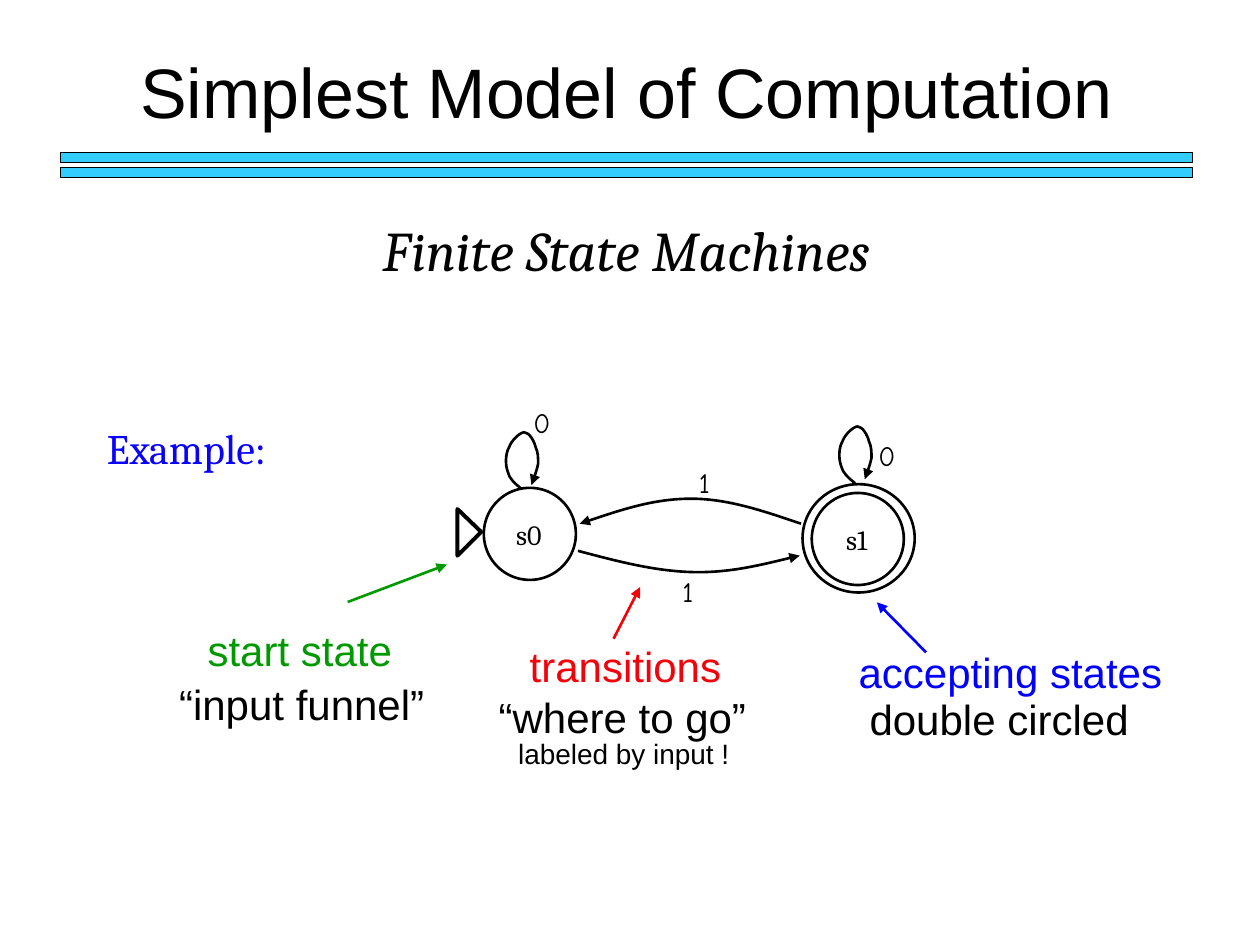
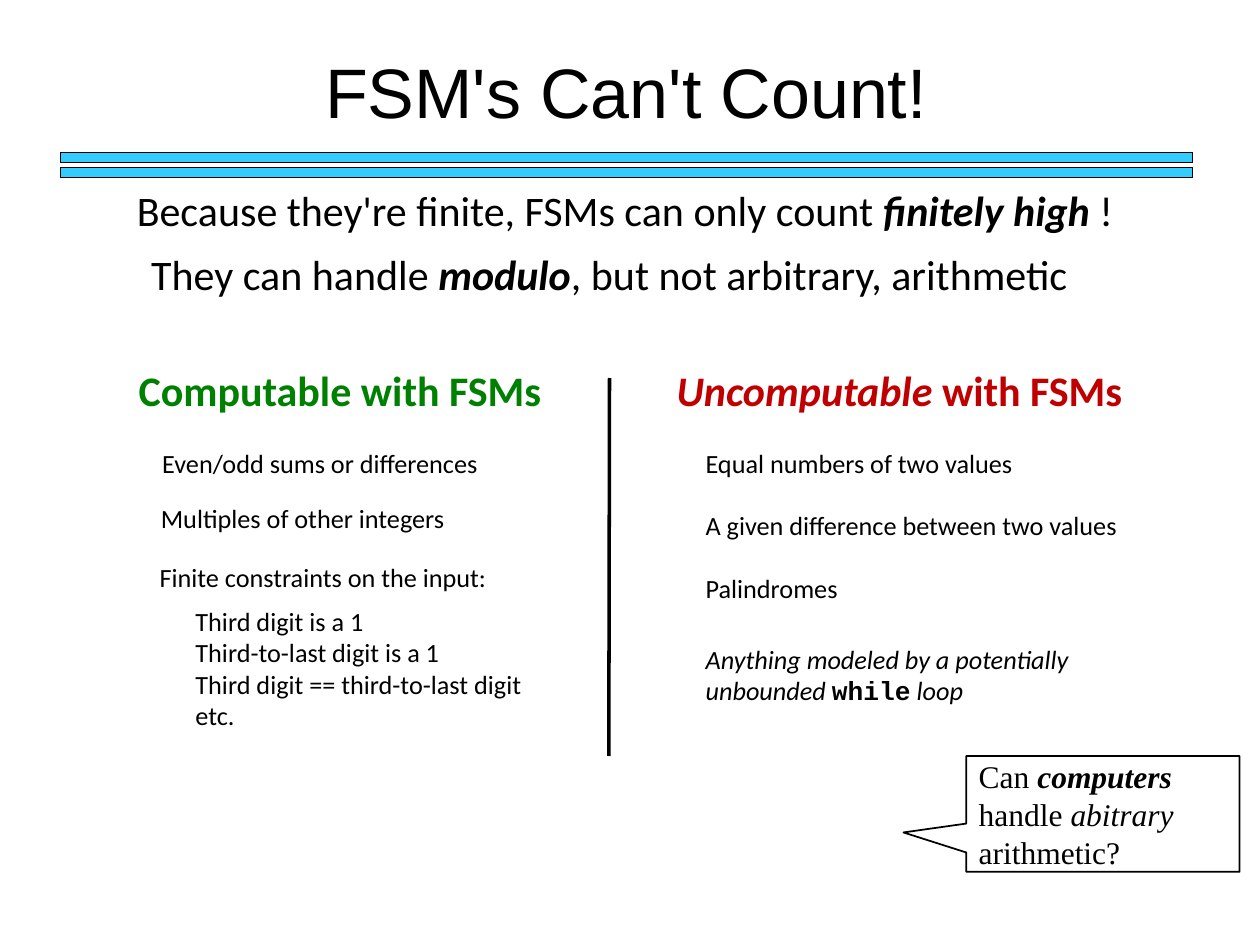
import pptx
import pptx.dml.color
import pptx.enum.shapes
import pptx.enum.text
import pptx.oxml.ns
import pptx.util

Pt = pptx.util.Pt
RGB = pptx.dml.color.RGBColor
SHAPE = pptx.enum.shapes.MSO_SHAPE
ALIGN = pptx.enum.text.PP_ALIGN
ANCHOR = pptx.enum.text.MSO_ANCHOR
qn = pptx.oxml.ns.qn

BLACK = RGB(0, 0, 0)
BAND = RGB(0x33, 0xCC, 0xFF)
START_GREEN = RGB(0, 0x99, 0)
ACCEPT_BLUE = RGB(0, 0, 0xFF)
EXAMPLE_BLUE = RGB(0x09, 0, 0xFF)
MOVE_RED = RGB(0xF3, 0x02, 0x0A)
CAN_GREEN = RGB(0, 0x80, 0)
CANNOT_RED = RGB(0xC0, 0, 0)

TITLE_BOX = (37.8, 24.2, 640, 55.4)
TITLE_FORMAT = {"name": "Arial", "size": Pt(40)}
BAND_TOPS = (87.1, 95.6)

SUBTITLE = {"name": "Cambria", "size": Pt(32), "italic": True}
EXAMPLE = {"name": "Cambria", "size": Pt(24)}
STATE = {"name": "Cambria", "size": Pt(16)}
INPUT = {"name": "Comic Neue", "size": Pt(16)}
LABEL = {"name": "Arial", "size": Pt(24)}
SMALL_LABEL = {"name": "Arial", "size": Pt(16)}
INTRO = {"name": "Calibri", "size": Pt(24)}
HEADING = {"name": "Calibri", "size": Pt(24), "bold": True}
ITEM = {"name": "Calibri", "size": Pt(15), "bold": False}
QUESTION = {"name": "Times New Roman", "size": Pt(18)}
STRONG = {"bold": True, "italic": True}
SLANTED = {"italic": True}
CODE = {"name": "Courier New", "bold": True}

MACHINE_LABELS = [
    ((153.4, 119.5, 409, 46), "Finite State Machines", SUBTITLE, BLACK),
    ((287.8, 292.3, 28.8, 26.6), "s0", STATE, BLACK),
    ((475.2, 294.8, 28.8, 26.6), "s1", STATE, BLACK),
    ((111.6, 353.2, 119.5, 36), "start state", LABEL, START_GREEN),
    ((95, 384.1, 154.8, 36), "“input funnel”", LABEL, BLACK),
    ((295.5, 362.2, 123.8, 36), "transitions", LABEL, MOVE_RED),
    ((277.9, 391.7, 155.5, 36), "“where to go”", LABEL, BLACK),
    ((288.7, 417.2, 135.4, 26.6), "labeled by input !", SMALL_LABEL, BLACK),
    ((483.4, 365.8, 187.9, 36), "accepting states", LABEL, ACCEPT_BLUE),
    ((489.6, 392.8, 162.7, 36), "double circled", LABEL, BLACK),
    ((391.7, 262.4, 21.6, 26.6), "1", INPUT, BLACK),
    ((382.3, 324.7, 21.6, 26.6), "1", INPUT, BLACK),
    ((297.4, 227.9, 24.5, 26.6), "0", INPUT, BLACK),
    ((494.6, 247, 24.5, 26.6), "0", INPUT, BLACK),
]
STATE_CIRCLES = [
    (276.5, 278.8, 52.6, 52.6),
    (463.9, 281.7, 52.6, 52.6),
    (458.6, 276.7, 64.1, 61.9),
]
POINTERS = [
    ((198.7, 344), (255.4, 322.6), START_GREEN),
    ((529.2, 372.8), (501.1, 344.2), ACCEPT_BLUE),
    ((350.6, 365), (365.8, 335.5), MOVE_RED),
]
FUNNEL = [(261.4, 290.9), (261.4, 317.6), (275, 304)]
TO_S1 = [(330.3, 314.8), (351.4, 320.4), (373, 326.2), (394.6, 326.9),
         (415.4, 327.6), (436.3, 322.6), (457, 317.5)]
TO_S0 = [(457.7, 299.3), (437, 292.3), (416.2, 285), (395, 285),
         (373.7, 285), (352.1, 292.3), (331.2, 299.3)]
LOOP = [(0, 0), (-3.6, -2.9), (-7.2, -5.8), (-8, -10), (-9.4, -13.7),
        (-9.4, -20.2), (-7.2, -23.8), (-5.8, -28), (-0.7, -32.4),
        (1.4, -32.4), (4.3, -32.4), (7.2, -27.4), (8, -23.8), (9.4, -20.9),
        (9.4, -18), (9.4, -14.4), (8.6, -10.8), (7.2, -6.5), (5.6, -2.2)]
LOOP_STARTS = [(298.1, 279.4), (488.6, 276.1)]

INTRO_LINES = [
    ((66.2, 101.9, 581.8, 36.7),
     [("Because they're finite, FSMs can only count ", {}),
      ("finitely high", STRONG), (" !", {})]),
    ((60, 138.2, 581.8, 36.7),
     [("They can handle ", {}), ("modulo", STRONG),
      (", but not arbitrary, arithmetic ", {})]),
]
COLUMNS = [
    {"heading": [("Computable with FSMs", {})],
     "heading_box": (72, 204.9, 247, 36.7), "color": CAN_GREEN,
     "list_box": (84, 252, 240, 180),
     "items": [
         ([("Even/odd sums or differences", {})], 0, 1.5),
         ([("Multiples of other integers", {})], 13.4, 0.7),
         ([("Finite constraints on the input:", {})], 16, 0),
         ([("Third digit is a 1", {})], 6.8, 20.5),
         ([("Third-to-last digit is a 1", {})], 0, 20.5),
         ([("Third digit == third-to-last digit", {})], 0, 20.5),
         ([("etc.", {})], 0, 20.5)]},
    {"heading": [("Uncomputable ", SLANTED), ("with FSMs", {})],
     "heading_box": (379.4, 204.9, 280, 36.7), "color": CANNOT_RED,
     "list_box": (396, 252, 252, 180),
     "items": [
         ([("Equal numbers of two values", {})], 0, 0),
         ([("A given difference between two values", {})], 17.7, 0),
         ([("Palindromes", {})], 17.7, 0),
         ([("Anything modeled by a potentially unbounded ", SLANTED),
           ("while", CODE), (" loop", SLANTED)], 22.5, 0)]},
]
CALLOUT_BOX = (552.2, 432, 156.2, 66.2)
CALLOUT = [("Can ", {}), ("computers", STRONG), (" handle ", {}),
           ("abitrary ", SLANTED), ("arithmetic?", {})]


def points(values):
    return [Pt(value) for value in values]


def set_all(target, values):
    for name, value in values.items():
        setattr(target, name, value)


def append_element(parent, tag, **attributes):
    child = parent.makeelement(qn(tag), attributes)
    parent.append(child)
    return child


def write(paragraph, runs, base, color, align=ALIGN.LEFT, before=0):
    set_all(paragraph, {"alignment": align, "space_before": Pt(before), "line_spacing": 1.0})
    for text, extra in runs:
        run = paragraph.add_run()
        run.text = text
        set_all(run.font, {**base, **extra})
        run.font.color.rgb = color


def indent_plain(paragraph, indent):
    properties = paragraph._p.get_or_add_pPr()
    properties.set("marL", str(Pt(indent)))
    properties.set("indent", "0")
    append_element(properties, "a:buNone")


def frame(shape, anchor, wrap=True):
    set_all(shape.text_frame, {"word_wrap": wrap, "vertical_anchor": anchor,
                               "auto_size": pptx.enum.text.MSO_AUTO_SIZE.NONE})
    return shape.text_frame


def place(placeholder, box):
    set_all(placeholder, dict(zip(("left", "top", "width", "height"), points(box))))
    return frame(placeholder, ANCHOR.TOP)


def outline(shape, width, fill=None):
    shape.shadow.inherit = False
    if fill is None:
        shape.fill.background()
    else:
        shape.fill.solid()
        shape.fill.fore_color.rgb = fill
    shape.line.color.rgb = BLACK
    shape.line.width = Pt(width)
    return shape


def add_arrowhead(shape):
    append_element(shape.line._get_or_add_ln(), "a:tailEnd", type="triangle")


def add_line(slide, start, end, color, width):
    line = slide.shapes.add_connector(
        pptx.enum.shapes.MSO_CONNECTOR.STRAIGHT, *points(start + end))
    line.line.color.rgb = color
    line.line.width = Pt(width)
    append_element(line._element.spPr, "a:effectLst")
    return line


def add_outline(slide, corners, width, closed=False):
    builder = slide.shapes.build_freeform(*points(corners[0]))
    builder.add_line_segments([points(corner) for corner in corners[1:]], close=closed)
    return outline(builder.convert_to_shape(), width)


def add_curve(slide, controls, width):
    curve = add_outline(slide, controls, width)
    segments = list(curve._element.iter(qn("a:lnTo")))
    track = segments[0].getparent()
    for first in range(0, len(segments), 3):
        bend = append_element(track, "a:cubicBezTo")
        for segment in segments[first:first + 3]:
            bend.append(segment[0])
            track.remove(segment)
    return curve


def start_slide(deck, layout, title):
    slide = deck.slides.add_slide(deck.slide_layouts[layout])
    for top in BAND_TOPS:
        band = slide.shapes.add_shape(SHAPE.RECTANGLE, *points((34.6, top, 646.9, 5.9)))
        outline(band, 0.75, BAND)
    heading = place(slide.shapes.title, TITLE_BOX)
    write(heading.paragraphs[0], [(title, {})], TITLE_FORMAT, BLACK, ALIGN.CENTER)
    return slide


def add_label(slide, box, runs, base, color, align=ALIGN.CENTER, anchor=ANCHOR.MIDDLE, wrap=False):
    label = slide.shapes.add_textbox(*points(box))
    write(frame(label, anchor, wrap).paragraphs[0], runs, base, color, align)


def build_machine(deck):
    slide = start_slide(deck, 5, "Simplest Model of Computation")
    for circle in STATE_CIRCLES:
        outline(slide.shapes.add_shape(SHAPE.OVAL, *points(circle)), 1.5)
    add_outline(slide, FUNNEL, 2.25, closed=True)
    loops = [[(x + left, y + top) for x, y in LOOP] for left, top in LOOP_STARTS]
    for transition in [TO_S1, TO_S0, *loops]:
        add_arrowhead(add_curve(slide, transition, 1.5))
    for start, end, color in POINTERS:
        add_arrowhead(add_line(slide, start, end, color, 1.5))
    for box, text, base, color in MACHINE_LABELS:
        add_label(slide, box, [(text, {})], base, color)
    add_label(slide, (54, 237.6, 204.5, 36), [("Example:", {})], EXAMPLE,
              EXAMPLE_BLUE, ALIGN.LEFT, wrap=True)


def build_limits(deck):
    slide = start_slide(deck, 4, "FSM's Can't Count!")
    for box, runs in INTRO_LINES:
        add_label(slide, box, runs, INTRO, BLACK, anchor=ANCHOR.TOP, wrap=True)
    for number, column in enumerate(COLUMNS):
        heading = place(slide.placeholders[2 * number + 1], column["heading_box"])
        write(heading.paragraphs[0], column["heading"], HEADING, column["color"])
        listing = place(slide.placeholders[2 * number + 2], column["list_box"])
        for row, (runs, before, indent) in enumerate(column["items"]):
            paragraph = listing.add_paragraph() if row else listing.paragraphs[0]
            write(paragraph, runs, ITEM, BLACK, before=before)
            indent_plain(paragraph, indent)
    add_line(slide, (348.3, 216), (347.9, 432), BLACK, 2)
    callout = outline(slide.shapes.add_shape(
        SHAPE.RECTANGULAR_CALLOUT, *points(CALLOUT_BOX)), 1)
    callout.adjustments[0], callout.adjustments[1] = -0.73, 0.16
    write(frame(callout, ANCHOR.MIDDLE).paragraphs[0], CALLOUT, QUESTION, BLACK)


def main():
    deck = pptx.Presentation()
    deck.slide_width, deck.slide_height = Pt(720), Pt(540)
    build_machine(deck)
    build_limits(deck)
    deck.save("out.pptx")


if __name__ == "__main__":
    main()
